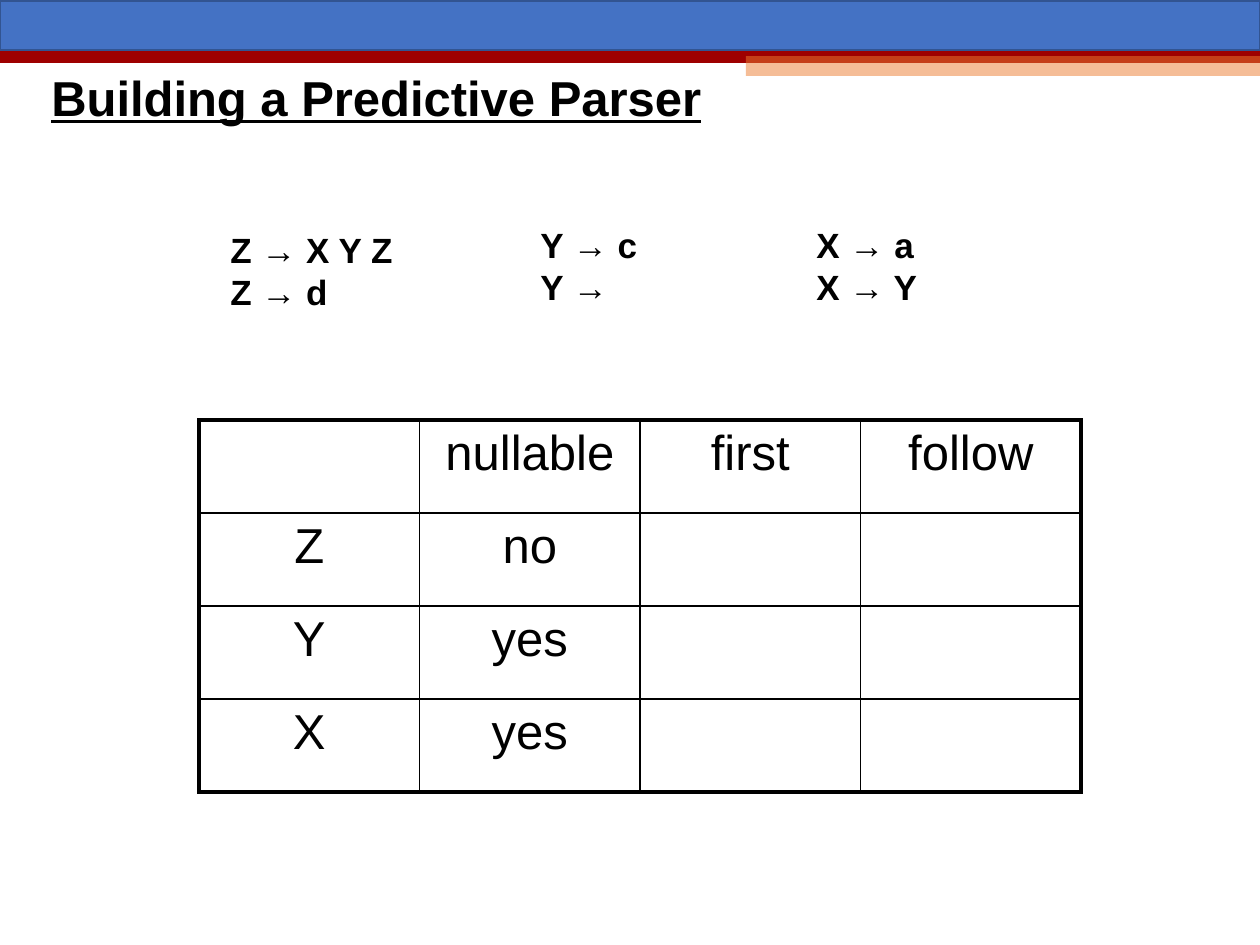
from pptx import Presentation
from pptx import util as u
from pptx.dml.color import RGBColor
from pptx.enum import shapes, text
from pptx.oxml.ns import qn
from lxml import etree

PX = 914400 / 126
BLACK = "000000"


def px(n):
    """Turn pixels into EMU."""
    return u.Emu(round(n * PX))


def color(value):
    """Turn a hex string into a colour."""
    return RGBColor.from_string(value)


def set_font(p, size, bold=False, underline=False):
    """Style a whole paragraph in black Arial."""
    f = p.font
    f.name, f.size, f.bold, f.underline = "Arial", u.Pt(size), bold, underline
    f.color.rgb = color(BLACK)


def add_bar(s, box, fill, line=None, alpha=None):
    """Add a filled rectangle with optional outline and opacity in percent."""
    sp = s.shapes.add_shape(shapes.MSO_SHAPE.RECTANGLE, *map(px, box))
    sp.shadow.inherit = False
    sp.fill.solid()
    sp.fill.fore_color.rgb = color(fill)
    if line:
        sp.line.color.rgb = color(line)
        sp.line.width = u.Pt(1)
    else:
        sp.line.fill.background()
    if alpha:
        clr = sp._element.spPr.find(qn("a:solidFill"))[0]
        etree.SubElement(clr, qn("a:alpha"), val=str(alpha * 1000))


def add_header(s, x, y, w):
    """Draw the band of bars across the top of the slide."""
    rule = s.shapes.add_connector(
        shapes.MSO_CONNECTOR.STRAIGHT, px(x), px(y + 56), px(x + w), px(y + 56))
    rule.line.color.rgb = color("9E0000")
    rule.line.width = u.Pt(7.5)
    etree.SubElement(rule._element.spPr, qn("a:effectLst"))
    add_bar(s, (x + 746, y + 56, w - 746, 20), "ED7D31", alpha=50)
    add_bar(s, (x, y + 1, w, 49), "4472C4", line="325491")


def add_title(s, box, title):
    """Add the underlined slide title."""
    tf = s.shapes.add_textbox(*map(px, box)).text_frame
    tf.word_wrap = True
    tf.vertical_anchor = text.MSO_ANCHOR.MIDDLE
    p = tf.paragraphs[0]
    p.text = title
    p.line_spacing = 0.9
    set_font(p, 28, bold=True, underline=True)


def add_productions(s, box, rules):
    """Add one group of grammar productions, one a line."""
    tf = s.shapes.add_textbox(*map(px, box)).text_frame
    tf.word_wrap = False
    tf.auto_size = text.MSO_AUTO_SIZE.SHAPE_TO_FIT_TEXT
    tf.text = "\n".join(rules)
    for p in tf.paragraphs:
        set_font(p, 20, bold=True)


def set_borders(cell, widths):
    """Draw the four cell borders from widths in points keyed by side."""
    tcPr = cell._tc.get_or_add_tcPr()
    for side, width in widths.items():
        ln = etree.SubElement(tcPr, qn(f"a:ln{side}"), w=str(u.Pt(width)))
        fill = etree.SubElement(ln, qn("a:solidFill"))
        etree.SubElement(fill, qn("a:srgbClr"), val=BLACK)


def add_sets_table(s, box, rows):
    """Add the nullable, first and follow table with a heavy outer frame."""
    x, y, w, h = box
    n_rows, n_cols = len(rows), len(rows[0])
    table = s.shapes.add_table(n_rows, n_cols, *map(px, box)).table
    table.first_row = table.horz_banding = False
    for col in table.columns:
        col.width = px(w / n_cols)
    for i, row in enumerate(rows):
        table.rows[i].height = px(h / n_rows)
        for j, value in enumerate(row):
            cell = table.cell(i, j)
            edges = {"L": j == 0, "R": j == n_cols - 1,
                     "T": i == 0, "B": i == n_rows - 1}
            set_borders(cell, {k: 2.25 if outer else 1 for k, outer in edges.items()})
            cell.fill.background()
            p = cell.text_frame.paragraphs[0]
            p.text = value
            p.alignment = text.PP_ALIGN.CENTER
            set_font(p, 28)


def main():
    """Build the slide and save it."""
    prs = Presentation()
    prs.slide_width, prs.slide_height = px(1260), px(945)
    s = prs.slides.add_slide(prs.slide_layouts[6])
    add_header(s, 0, 0, 1260)
    add_productions(s, (218, 222, 189, 97), ["Z → X Y Z", "Z → d"])
    add_productions(s, (528, 217, 122, 97), ["Y → c", "Y →"])
    add_productions(s, (804, 217, 135, 97), ["X → a", "X → Y"])
    add_sets_table(s, (199, 420, 882, 372), [
        ["", "nullable", "first", "follow"],
        ["Z", "no", "", ""],
        ["Y", "yes", "", ""],
        ["X", "yes", "", ""],
    ])
    add_title(s, (39, 59, 1134, 83), "Building a Predictive Parser")
    prs.save("out.pptx")


if __name__ == "__main__":
    main()
